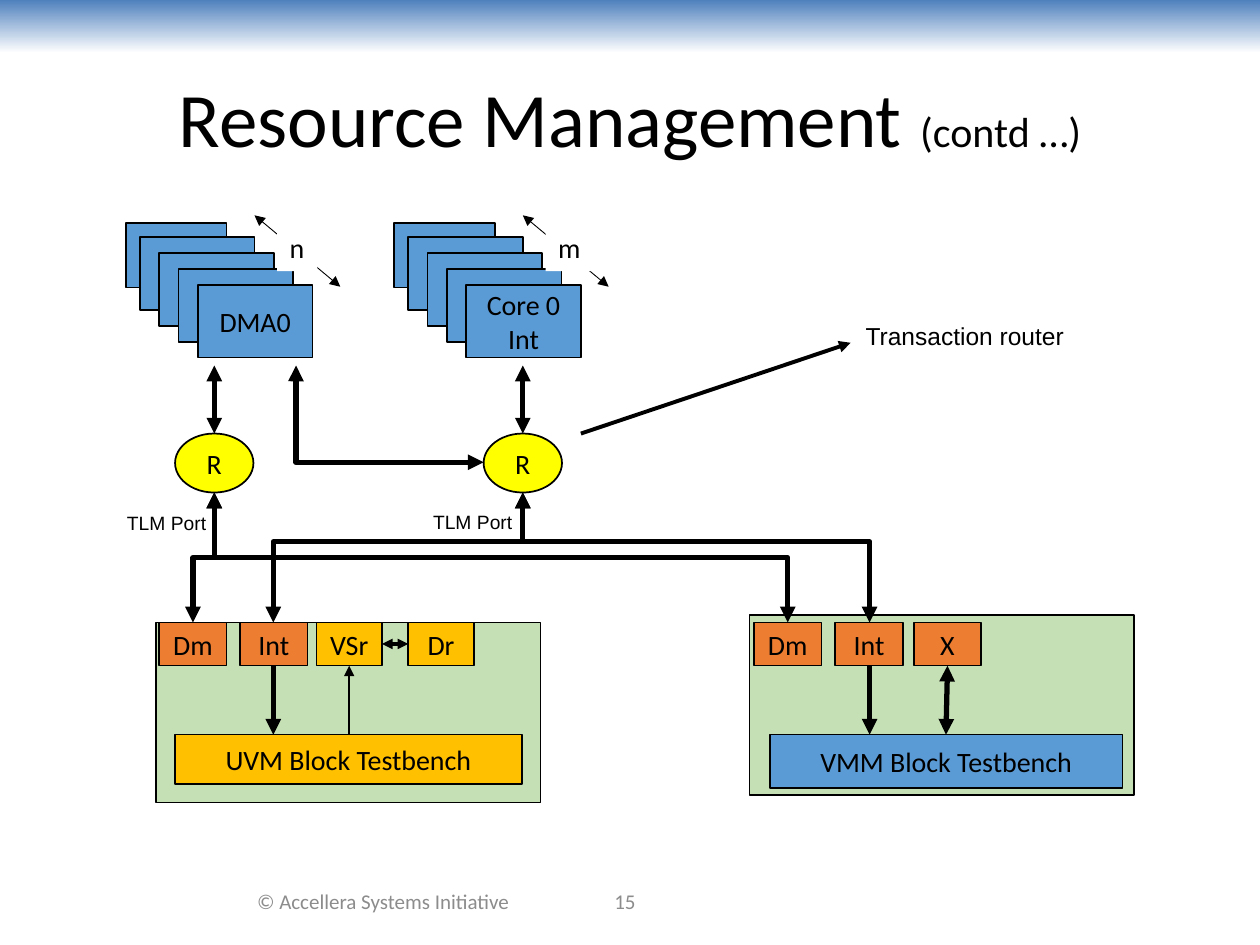
import pptx
import pptx.dml.color
import pptx.enum.shapes
import pptx.enum.text
import pptx.oxml.ns
import pptx.util
from lxml import etree

Cm = pptx.util.Cm
Pt = pptx.util.Pt
qn = pptx.oxml.ns.qn
Shape = pptx.enum.shapes.MSO_SHAPE
Connector = pptx.enum.shapes.MSO_CONNECTOR
Align = pptx.enum.text.PP_ALIGN
Anchor = pptx.enum.text.MSO_ANCHOR

COLORS = {
    "black": "000000",
    "white": "FFFFFF",
    "grey": "8C8C8C",
    "banner": "4F81BD",
    "blue": "5B9BD5",
    "green": "C5E0B4",
    "amber": "FFC000",
    "orange": "ED7D31",
    "yellow": "FFFF00",
}


def rgb(name):
    return pptx.dml.color.RGBColor.from_string(COLORS[name])


def add_span(para, text, *, size=16, color="black", font="Calibri"):
    span = para.add_run()
    span.text = text
    span.font.size = Pt(size)
    span.font.name = font
    span.font.color.rgb = rgb(color)


class Diagram:
    """Holds the current page and the shared style; lengths are in cm."""

    def __init__(self, page, outline=1, inset=0.1):
        self.page = page
        self.outline = outline
        self.inset = inset

    def banner(self, width, height):
        band = self.page.shapes.add_shape(Shape.RECTANGLE, 0, 0, Cm(width), Cm(height))
        band.shadow.inherit = False
        band.line.fill.background()
        band.fill.gradient()
        band.fill.gradient_angle = 270
        for stop, color in zip(band.fill.gradient_stops, ("banner", "white")):
            stop.color.rgb = rgb(color)

    def block(self, left, top, width, height, color, text="", kind=Shape.RECTANGLE):
        box = self.page.shapes.add_shape(kind, Cm(left), Cm(top), Cm(width), Cm(height))
        box.shadow.inherit = False
        box.fill.solid()
        box.fill.fore_color.rgb = rgb(color)
        box.line.color.rgb = rgb("black")
        box.line.width = Pt(self.outline)
        if text:
            frame = box.text_frame
            frame.word_wrap = True
            frame.margin_left = frame.margin_right = Cm(self.inset)
            frame.vertical_anchor = Anchor.MIDDLE
            para = frame.paragraphs[0]
            para.alignment = Align.CENTER
            add_span(para, text)

    def label(self, left, top, width, height, text, fill=None, **style):
        """Add one unwrapped line of text that starts at the top left."""
        box = self.page.shapes.add_textbox(Cm(left), Cm(top), Cm(width), Cm(height))
        box.text_frame.word_wrap = False
        if fill:
            box.fill.solid()
            box.fill.fore_color.rgb = rgb(fill)
        add_span(box.text_frame.paragraphs[0], text, **style)

    def centred(self, left, top, width, height, *spans):
        """Add a centred paragraph made of (text, style) spans."""
        box = self.page.shapes.add_textbox(Cm(left), Cm(top), Cm(width), Cm(height))
        frame = box.text_frame
        frame.word_wrap = True
        frame.vertical_anchor = Anchor.MIDDLE
        para = frame.paragraphs[0]
        para.alignment = Align.CENTER
        for text, style in spans:
            add_span(para, text, **style)

    def arrow(self, start, end, weight=3, both=True, kind=Connector.STRAIGHT):
        line = self.page.shapes.add_connector(kind, *(Cm(v) for v in (*start, *end)))
        line.line.color.rgb = rgb("black")
        line.line.width = Pt(weight)
        outline = line.line._get_or_add_ln()
        for tag in ("a:headEnd", "a:tailEnd") if both else ("a:tailEnd",):
            etree.SubElement(outline, qn(tag), type="triangle")
        properties = line._element.spPr
        etree.SubElement(properties, qn("a:effectLst"))
        return properties

    def elbow(self, start, end, bend):
        """Add a bent arrow; bend is the turning point in percent of its run."""
        properties = self.arrow(start, end, kind=Connector.ELBOW)
        geometry = properties.find(qn("a:prstGeom"))
        guides = geometry.find(qn("a:avLst"))
        if guides is None:
            guides = etree.SubElement(geometry, qn("a:avLst"))
        etree.SubElement(guides, qn("a:gd"), name="adj1", fmla=f"val {round(bend * 1000)}")
        return properties

    def riser(self, start, end, bend):
        """Add a bent arrow that leaves upwards: a sideways elbow, turned."""
        (x1, y1), (x2, y2) = start, end
        middle_x, middle_y = (x1 + x2) / 2, (y1 + y2) / 2
        half_run, half_rise = (y1 - y2) / 2, abs(x2 - x1) / 2
        turn = 90 if x2 > x1 else 270
        if turn == 270:
            half_run = -half_run
        properties = self.elbow(
            (middle_x + half_run, middle_y + half_rise),
            (middle_x - half_run, middle_y - half_rise),
            bend,
        )
        properties.find(qn("a:xfrm")).set("rot", str(turn * 60000))

    def stack(self, left, text, count, count_width):
        """Add five overlapping sheets with a depth arrow and its count."""
        top = 4.5
        self.block(left, top, 2.03, 1.3, "blue")
        for step in range(4):
            self.block(left + 0.28 + 0.39 * step, top + 0.28 + 0.32 * step,
                       2.31, 1.47, "blue", text if step == 3 else "")
        self.arrow((left + 2.59, 4.34), (left + 4.32, 5.78), weight=0.5)
        self.label(left + 3.05, 4.53, count_width, 0.94, count, fill="white")


def main():
    deck = pptx.Presentation()
    deck.slide_width, deck.slide_height = Cm(25.4), Cm(19.05)
    diagram = Diagram(deck.slides.add_slide(deck.slide_layouts[6]))

    diagram.banner(25.4, 1.07)
    diagram.centred(1.27, 0.76, 22.86, 3.18,
                    ("Resource Management ", {"size": 44}), ("(contd …)", {"size": 24}))
    footer = {"size": 12, "color": "grey"}
    diagram.centred(4.65, 17.65, 6.15, 1.02, ("© Accellera Systems Initiative", footer))
    diagram.centred(10.16, 17.65, 4.88, 1.02, ("15", footer))

    diagram.stack(2.54, "DMA0", "n", 0.81)
    diagram.stack(7.95, "Core 0 Int", "m", 0.97)

    # Testbench panels
    diagram.block(3.15, 12.55, 7.75, 3.63, "green")
    diagram.block(15.11, 12.4, 7.75, 3.63, "green")
    bench_top = 14.81
    diagram.block(3.53, bench_top, 6.99, 0.99, "amber", "UVM Block Testbench")
    diagram.block(15.52, bench_top, 7.11, 1.07, "blue", "VMM Block Testbench")

    # Routers and the buses down to the ports
    port_top, port_height = 12.55, 0.87
    port_bottom = port_top + port_height
    dma_x, core_x = 4.32, 10.54
    router_top, router_height = 8.74, 1.19
    buses = ((dma_x, (3.89, 15.88), 50), (core_x, (5.51, 17.53), 62.1))
    for router_x, port_centres, bend in buses:
        diagram.block(router_x - 0.79, router_top, 1.58, router_height, "yellow", "R", Shape.OVAL)
        diagram.arrow((router_x, router_top), (router_x, 7.37))
        for port_x in port_centres:
            diagram.riser((port_x, port_top), (router_x, router_top + router_height), bend)
    diagram.elbow((5.97, 7.37), (9.75, 9.32), -0.1)

    ports = (
        (3.21, "orange", "Dm"), (4.84, "orange", "Int"),
        (6.38, "amber", "VSr"), (8.23, "amber", "Dr"),
        (15.2, "orange", "Dm"), (16.84, "orange", "Int"), (18.42, "orange", "X"),
    )
    for left, color, text in ports:
        width = 1.36 if color == "orange" else 1.32
        diagram.block(left, port_top, width, port_height, color, text)

    for int_x in (5.51, 17.53):
        diagram.arrow((int_x, port_bottom), (int_x, bench_top), both=False)
    diagram.arrow((7.04, bench_top), (7.04, port_bottom), weight=1, both=False)
    diagram.arrow((19.1, port_bottom), (19.07, bench_top))
    diagram.arrow((7.7, 12.98), (8.23, 12.98), weight=2)

    diagram.arrow((11.71, router_top), (17.15, 6.91), weight=2.25, both=False)
    diagram.label(17.2, 6.35, 4.52, 0.86, "Transaction router", size=14, font="Arial")
    for left, top in ((2.31, 10.19), (8.48, 10.16)):
        diagram.label(left, top, 2.11, 0.74, "TLM Port", size=11, font="Arial")

    deck.save("out.pptx")


if __name__ == "__main__":
    main()
